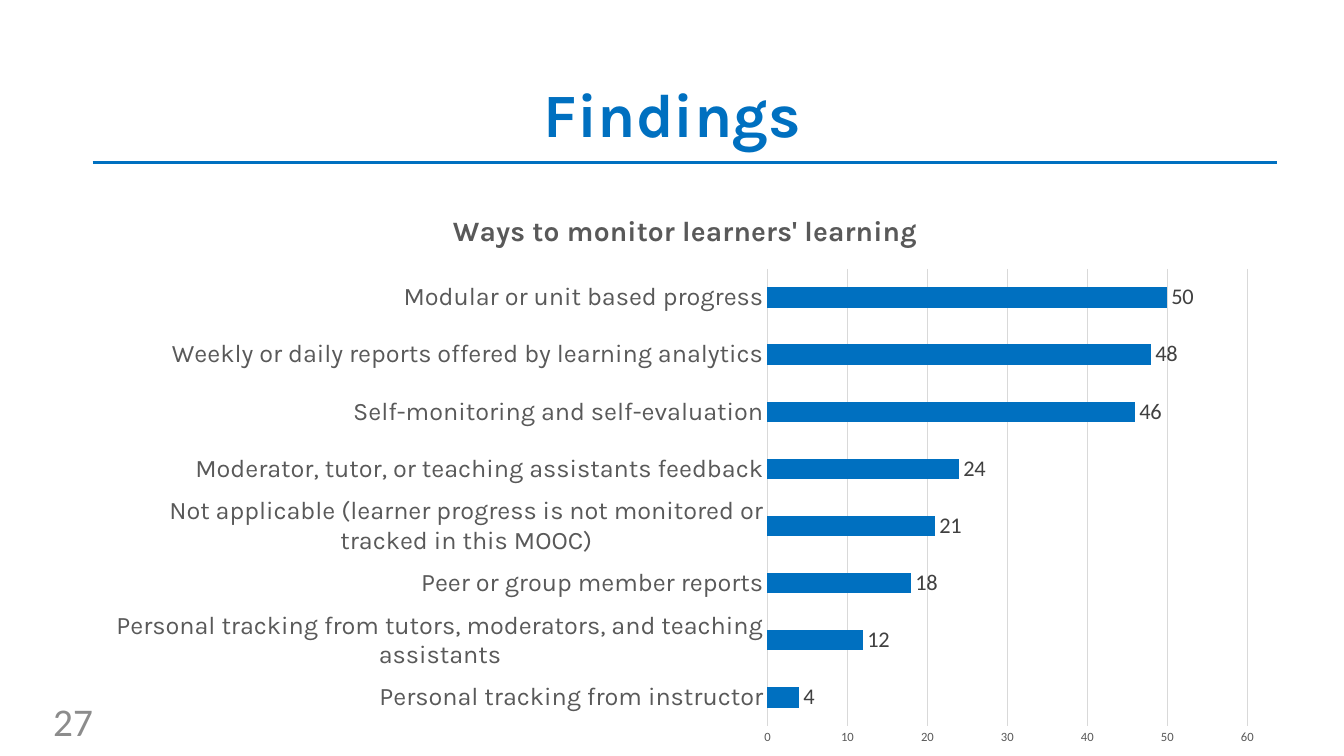
from pptx import Presentation
from pptx.chart.data import CategoryChartData
from pptx.dml.color import RGBColor
from pptx.enum.chart import XL_CHART_TYPE, XL_LABEL_POSITION, XL_TICK_MARK
from pptx.enum.shapes import MSO_CONNECTOR
from pptx.enum.text import MSO_ANCHOR, PP_ALIGN
from pptx.oxml.ns import qn
from pptx.util import Inches, Pt
from lxml import etree

BAR_CHART = XL_CHART_TYPE.BAR_CLUSTERED
OUTSIDE_END = XL_LABEL_POSITION.OUTSIDE_END
NO_TICK = XL_TICK_MARK.NONE
STRAIGHT = MSO_CONNECTOR.STRAIGHT
MIDDLE = MSO_ANCHOR.MIDDLE
CENTER, RIGHT = PP_ALIGN.CENTER, PP_ALIGN.RIGHT

# Content
TITLE = "Findings"
PAGE_NUMBER = "27"
CHART_TITLE = "Ways to monitor learners' learning"
MONITORING_WAYS = [  # bottom bar first
    ("Personal tracking from instructor", 4),
    ("Personal tracking from tutors, moderators, and teaching assistants", 12),
    ("Peer or group member reports", 18),
    ("Not applicable (learner progress is not monitored or tracked in this MOOC)", 21),
    ("Moderator, tutor, or teaching assistants feedback", 24),
    ("Self-monitoring and self-evaluation", 46),
    ("Weekly or daily reports offered by learning analytics", 48),
    ("Modular or unit based progress", 50),
]

# Style
HEADING_FONT, NUMBER_FONT = "Karla", "Calibri"
BLUE, GRAY, DARK, PALE, GRID = "0070C0", "595959", "404040", "8C8C8C", "D9D9D9"
LEFT, CONTENT_WIDTH = 0.92, 11.75


def color(value):
    return RGBColor.from_string(value)


def set_font(font, name, size, shade, bold=False):
    font.name, font.size, font.bold = name, Pt(size), bold
    font.color.rgb = color(shade)


def set_line(line, shade, width):
    line.color.rgb = color(shade)
    line.width = Pt(width)


def add_text(page, text, at, font, size, shade, bold=False, align=CENTER, spacing=1.0):
    box = page.shapes.add_textbox(*map(Inches, at))
    frame = box.text_frame
    frame.word_wrap = True
    frame.vertical_anchor = MIDDLE
    para = frame.paragraphs[0]
    para.alignment = align
    para.line_spacing = spacing
    span = para.add_run()
    span.text = text
    set_font(span.font, font, size, shade, bold)


deck = Presentation()
deck.slide_width, deck.slide_height = Inches(13.33), Inches(7.5)
page = deck.slides.add_slide(deck.slide_layouts[6])

# Heading and rule
add_text(page, TITLE, (LEFT, 0.44, 11.5, 1.45), HEADING_FONT, 44, BLUE,
         bold=True, spacing=0.9)
rule = page.shapes.add_connector(STRAIGHT, Inches(LEFT), Inches(1.61),
                                 Inches(LEFT + CONTENT_WIDTH), Inches(1.61))
set_line(rule.line, BLUE, 2)
etree.SubElement(rule._element.spPr, qn("a:effectLst"))

# Page number
add_text(page, PAGE_NUMBER, (0.02, 6.95, 1, 0.4), NUMBER_FONT, 28, PALE, align=RIGHT)

# Chart
data = CategoryChartData(number_format="0")
data.categories = [way for way, count in MONITORING_WAYS]
data.add_series("Series 1", [count for way, count in MONITORING_WAYS])
chart = page.shapes.add_chart(BAR_CHART, Inches(LEFT), Inches(1.89),
                              Inches(CONTENT_WIDTH), Inches(5.61), data).chart
set_font(chart.font, NUMBER_FONT, 10, "000000")
chart.has_legend = False
chart.has_title = True
heading = chart.chart_title.text_frame.paragraphs[0].add_run()
heading.text = CHART_TITLE
set_font(heading.font, HEADING_FONT, 20, GRAY, bold=True)
chart.chart_title.include_in_layout = False

# Axes
ways, counts = chart.category_axis, chart.value_axis
for axis, font, size in ((ways, HEADING_FONT, 18), (counts, NUMBER_FONT, 9)):
    axis.major_tick_mark = axis.minor_tick_mark = NO_TICK
    set_font(axis.tick_labels.font, font, size, GRAY)
set_line(ways.format.line, GRID, 0.75)
counts.format.line.fill.background()
counts.minimum_scale, counts.maximum_scale, counts.major_unit = 0, 60, 10
counts.has_major_gridlines = True
set_line(counts.major_gridlines.format.line, GRID, 0.75)

# Bars and their values
plot = chart.plots[0]
plot.gap_width = 182
plot.vary_by_categories = False
bars = plot.series[0]
bars.format.fill.solid()
bars.format.fill.fore_color.rgb = color(BLUE)
labels = bars.data_labels
labels.show_value = True
labels.position = OUTSIDE_END
labels.number_format, labels.number_format_is_linked = "0", False
set_font(labels.font, NUMBER_FONT, 16, DARK)

deck.save("out.pptx")
